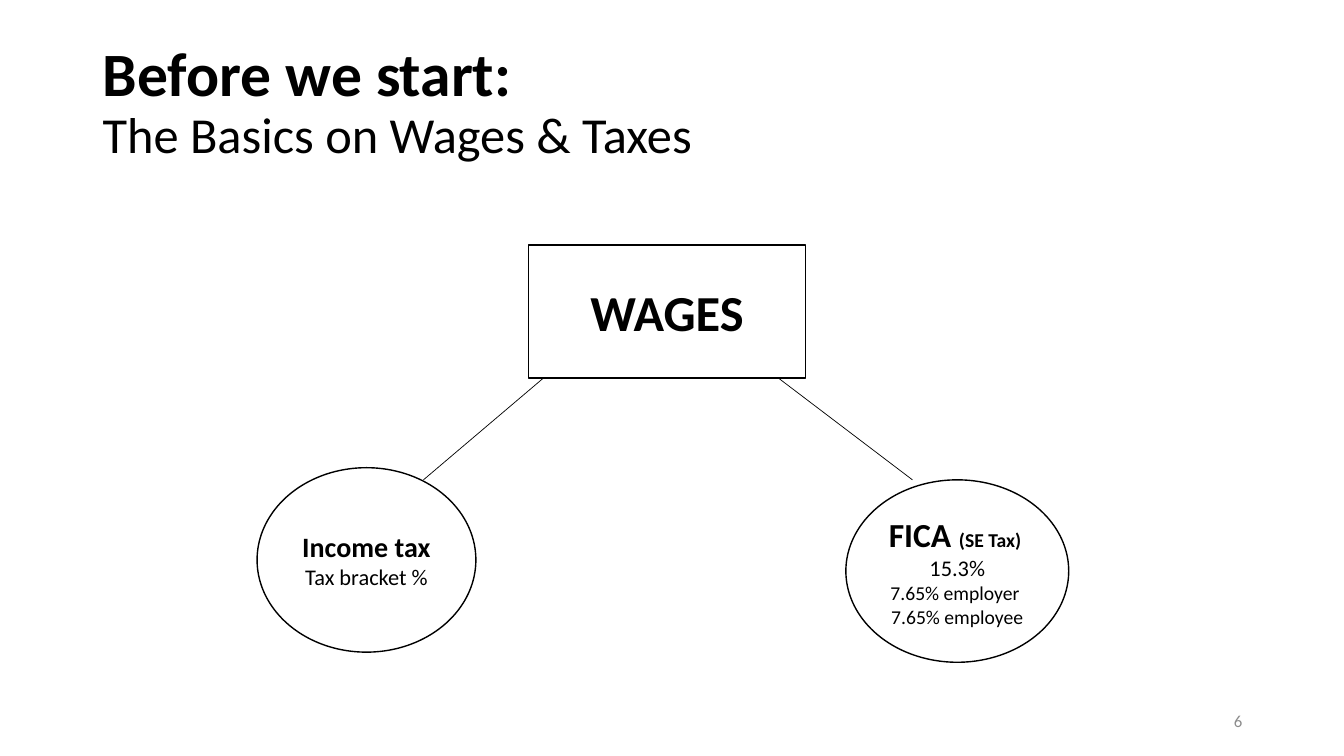
from dataclasses import dataclass

from lxml import etree
from pptx import Presentation
from pptx import util as u
from pptx.dml.color import RGBColor
from pptx.enum import shapes, text
from pptx.oxml.ns import qn

SLIDE_WIDTH, SLIDE_HEIGHT = u.Inches(13.33), u.Inches(7.5)


@dataclass(frozen=True)
class Theme:
    """Colours, font and type sizes of the slide."""
    font: str = "Calibri"
    ink: str = "000000"
    paper: str = "FFFFFF"
    muted: str = "8C8C8C"
    title: int = 44
    heading: int = 36
    branch: int = 24
    label: int = 20
    body: int = 16
    small: int = 14
    footer: int = 12
    outline: float = 1
    link: float = 0.5


THEME = Theme()
CENTRE, LEFT, RIGHT = text.PP_ALIGN.CENTER, text.PP_ALIGN.LEFT, text.PP_ALIGN.RIGHT


def across(percent):
    """Turn a percentage of the slide width into a length."""
    return u.Emu(round(SLIDE_WIDTH * percent / 100))


def down(percent):
    """Turn a percentage of the slide height into a length."""
    return u.Emu(round(SLIDE_HEIGHT * percent / 100))


def place(left, top, width, height):
    """Turn four percentages into a position and a size."""
    return across(left), down(top), across(width), down(height)


def add_run(paragraph, wording, size, bold=False, colour=THEME.ink):
    """Append one formatted run to a paragraph."""
    run = paragraph.add_run()
    run.text = wording
    run.font.color.rgb = RGBColor.from_string(colour)
    for name, value in {"name": THEME.font, "size": u.Pt(size), "bold": bold}.items():
        setattr(run.font, name, value)


def write(frame, lines, align):
    """Fill a text frame with lines, each a list of run settings."""
    for name, value in {"word_wrap": True, "vertical_anchor": text.MSO_ANCHOR.MIDDLE}.items():
        setattr(frame, name, value)
    for index, runs in enumerate(lines):
        paragraph = frame.add_paragraph() if index else frame.paragraphs[0]
        paragraph.alignment = align
        for run in runs:
            add_run(paragraph, *run)


def add_title(slide, area, heading, subheading):
    """Add the two-line title as one paragraph with a line break."""
    frame = slide.shapes.add_textbox(*place(*area)).text_frame
    write(frame, [[(heading, THEME.title, True)]], LEFT)
    paragraph = frame.paragraphs[0]
    paragraph.line_spacing = 0.9
    paragraph.add_line_break()
    add_run(paragraph, subheading, THEME.heading)


def add_page_number(slide, area, number):
    """Add the page number in the lower right corner."""
    frame = slide.shapes.add_textbox(*place(*area)).text_frame
    write(frame, [[(number, THEME.footer, False, THEME.muted)]], RIGHT)


def add_node(slide, kind, area, lines):
    """Add an outlined diagram node with centred text."""
    node = slide.shapes.add_shape(kind, *place(*area))
    node.shadow.inherit = False
    node.fill.solid()
    node.fill.fore_color.rgb = RGBColor.from_string(THEME.paper)
    node.line.color.rgb = RGBColor.from_string(THEME.ink)
    node.line.width = u.Pt(THEME.outline)
    write(node.text_frame, lines, CENTRE)


def add_link(slide, start, end):
    """Draw a thin straight line between two points."""
    link = slide.shapes.add_connector(
        shapes.MSO_CONNECTOR.STRAIGHT,
        across(start[0]), down(start[1]), across(end[0]), down(end[1]))
    link.line.color.rgb = RGBColor.from_string(THEME.ink)
    link.line.width = u.Pt(THEME.link)
    etree.SubElement(link._element.spPr, qn("a:effectLst"))


def main():
    """Build the wages and taxes slide."""
    deck = Presentation()
    deck.slide_width, deck.slide_height = SLIDE_WIDTH, SLIDE_HEIGHT
    slide = deck.slides.add_slide(deck.slide_layouts[6])

    add_title(slide, (6.9, 4.13, 86.27, 19.33),
              "Before we start:", "The Basics on Wages & Taxes")
    add_page_number(slide, (70.67, 92.67, 22.5, 5.33), "6")

    box, oval = shapes.MSO_SHAPE.FLOWCHART_PROCESS, shapes.MSO_SHAPE.OVAL
    add_node(slide, box, (39.31, 32.4, 20.63, 17.6),
             [[("WAGES", THEME.heading, True)]])
    add_node(slide, oval, (19.13, 61.87, 16.28, 24.4),
             [[("Income tax", THEME.label, True)],
              [("Tax bracket %", THEME.body)]])
    add_node(slide, oval, (62.94, 63.47, 16.58, 24.13),
             [[("FICA ", THEME.branch, True), ("(SE Tax) ", THEME.small, True)],
              [("15.3%", THEME.body)],
              [("7.65% employer ", THEME.small)],
              [("7.65% employee", THEME.small)]])

    wages_bottom, branch_top = 50, 63.47
    for wages_x, branch_x in ((40.44, 31.51), (57.91, 67.89)):
        add_link(slide, (wages_x, wages_bottom), (branch_x, branch_top))

    deck.save("out.pptx")


if __name__ == "__main__":
    main()
